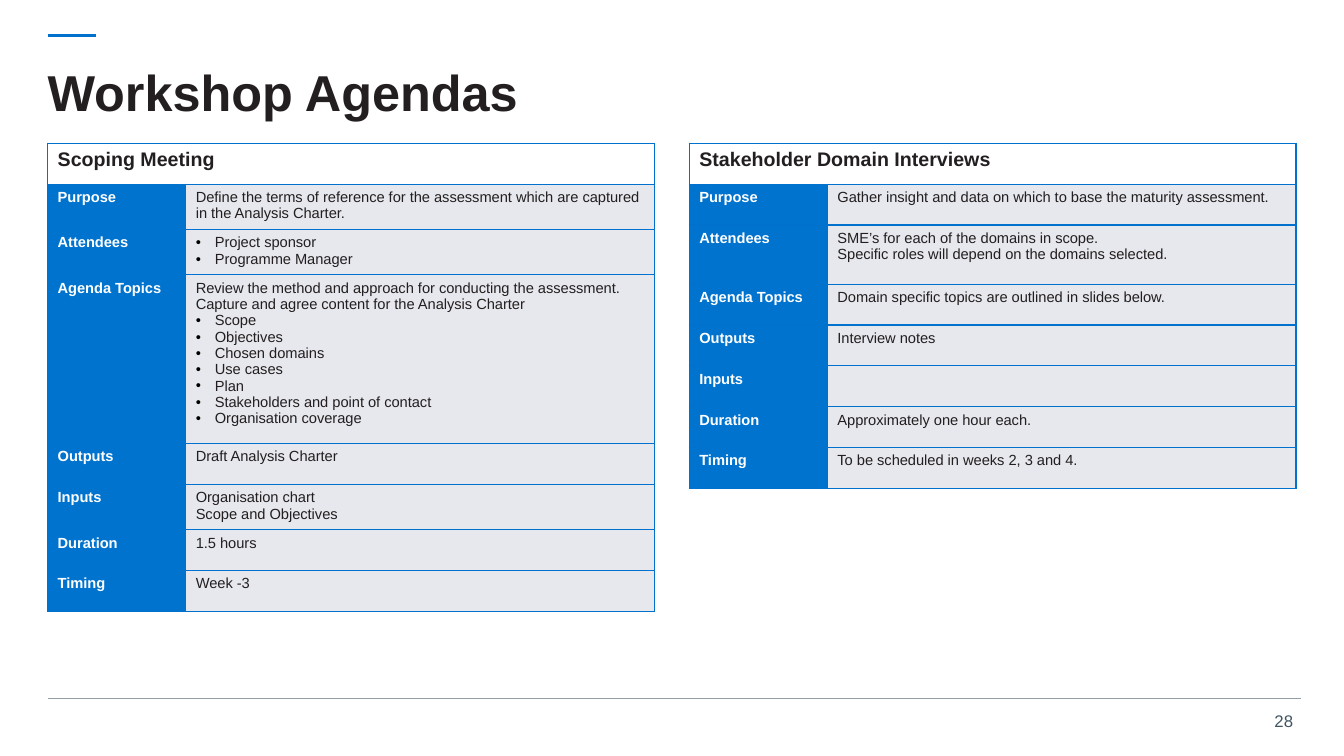
from lxml.etree import SubElement
from pptx import Presentation
from pptx.dml.color import RGBColor
from pptx.enum.shapes import MSO_CONNECTOR
from pptx.enum.text import MSO_ANCHOR, PP_ALIGN
from pptx.oxml.ns import qn
from pptx.util import Cm, Pt

BLUE, CELL_BLUE, INK, GREY, WHITE = "0072CE", "0073CF", "231F20", "E7E8ED", "FFFFFF"
LEFT, TABLE_TOP, TABLE_GAP = 1.2, 3.61, 16.17
COLUMNS = (3.48, 11.81)
ROW, TWO_LINES, THREE_LINES, NINE_LINES = 1.03, 1.08, 1.49, 3.96
HEADING = {"size": Pt(14), "bold": True}
LABEL = {"size": Pt(10.5), "bold": True}
BODY = {"size": Pt(10.5), "bold": False}

SCOPING = [
    ("Purpose", TWO_LINES, ["Define the terms of reference for the assessment which are captured in the Analysis Charter."]),
    ("Attendees", TWO_LINES, ["• Project sponsor", "• Programme Manager"]),
    ("Agenda Topics", NINE_LINES, [
        "Review the method and approach for conducting the assessment.",
        "Capture and agree content for the Analysis Charter",
        "• Scope", "• Objectives", "• Chosen domains", "• Use cases", "• Plan",
        "• Stakeholders and point of contact", "• Organisation coverage"]),
    ("Outputs", ROW, ["Draft Analysis Charter"]),
    ("Inputs", TWO_LINES, ["Organisation chart", "Scope and Objectives"]),
    ("Duration", ROW, ["1.5 hours"]),
    ("Timing", ROW, ["Week -3"]),
]
INTERVIEWS = [
    ("Purpose", ROW, ["Gather insight and data on which to base the maturity assessment."]),
    ("Attendees", THREE_LINES, ["SME’s for each of the domains in scope.",
                                "Specific roles will depend on the domains selected."]),
    ("Agenda Topics", ROW, ["Domain specific topics are outlined in slides below."]),
    ("Outputs", ROW, ["Interview notes"]),
    ("Inputs", ROW, []),
    ("Duration", ROW, ["Approximately one hour each."]),
    ("Timing", ROW, ["To be scheduled in weeks 2, 3 and 4."]),
]


def colour(value):
    """Turn a hex string into a colour."""
    return RGBColor.from_string(value)


def apply(target, values):
    """Set each named attribute on the target."""
    for name, value in values.items():
        setattr(target, name, value)


def add_span(para, text, shade, style):
    """Add a formatted run to a paragraph."""
    span = para.add_run()
    span.text = text
    apply(span.font, {"name": "Arial", **style})
    span.font.color.rgb = colour(shade)


def add_bullet(para):
    """Give a paragraph a black hanging bullet."""
    properties = para._p.get_or_add_pPr()
    properties.set("marL", str(Cm(0.48)))
    properties.set("indent", str(-Cm(0.48)))
    shade = SubElement(properties, qn("a:buClr"))
    SubElement(shade, qn("a:srgbClr"), val="000000")
    SubElement(properties, qn("a:buFont"), typeface="Arial")
    SubElement(properties, qn("a:buChar"), char="•")


def add_text(page, place, text, shade, style, frame_format, para_format):
    """Add a text box holding one line."""
    box = page.shapes.add_textbox(*map(Cm, place))
    apply(box.text_frame, {"word_wrap": True, **frame_format})
    para = box.text_frame.paragraphs[0]
    apply(para, para_format)
    add_span(para, text, shade, style)


def add_rule(page, start, end, height, shade, width):
    """Draw a horizontal line."""
    rule = page.shapes.add_connector(MSO_CONNECTOR.STRAIGHT, Cm(start), Cm(height), Cm(end), Cm(height))
    rule.line.color.rgb = colour(shade)
    rule.line.width = Pt(width)
    SubElement(rule._element.spPr, qn("a:effectLst"))


def fill_cell(cell, lines, fill, shade, style):
    """Border, fill and write one table cell."""
    properties = cell._tc.get_or_add_tcPr()
    for side in ("a:lnL", "a:lnR", "a:lnT", "a:lnB"):
        border = SubElement(properties, qn(side), w=str(Pt(1)))
        SubElement(SubElement(border, qn("a:solidFill")), qn("a:srgbClr"), val=BLUE)
    cell.fill.solid()
    cell.fill.fore_color.rgb = colour(fill)
    for index, line in enumerate(lines):
        frame = cell.text_frame
        para = frame.add_paragraph() if index else frame.paragraphs[0]
        if line.startswith("• "):
            add_bullet(para)
        add_span(para, line.removeprefix("• "), shade, style)


def add_agenda(page, left, heading, rows):
    """Add an agenda table under a merged heading."""
    heights = [ROW] + [height for _, height, _ in rows]
    frame = page.shapes.add_table(len(heights), 2, Cm(left), Cm(TABLE_TOP), Cm(sum(COLUMNS)), Cm(sum(heights)))
    table = frame.table
    for column, width in zip(table.columns, COLUMNS):
        column.width = Cm(width)
    for row, height in zip(table.rows, heights):
        row.height = Cm(height)
    table.cell(0, 0).merge(table.cell(0, 1))
    fill_cell(table.cell(0, 0), [heading], WHITE, INK, HEADING)
    fill_cell(table.cell(0, 1), [], WHITE, INK, HEADING)
    for index, (label, _, lines) in enumerate(rows, 1):
        fill_cell(table.cell(index, 0), [label], CELL_BLUE, WHITE, LABEL)
        fill_cell(table.cell(index, 1), lines, GREY, INK, BODY)


def main():
    """Build the workshop agendas slide."""
    deck = Presentation()
    apply(deck, {"slide_width": Cm(33.87), "slide_height": Cm(19.05)})
    page = deck.slides.add_slide(deck.slide_layouts[6])
    add_text(page, (31.8, 17.78, 1.04, 0.76), "28", "425563", {"size": Pt(12)},
             {"word_wrap": False}, {"alignment": PP_ALIGN.RIGHT})
    add_rule(page, LEFT, 2.41, 0.89, BLUE, 2)
    add_rule(page, LEFT, 32.79, 17.6, "919EA8", 0.75)
    margins = dict.fromkeys(("margin_left", "margin_top", "margin_right", "margin_bottom"), 0)
    add_text(page, (LEFT, 1.2, 31.67, 2.41), "Workshop Agendas", INK, {"size": Pt(36), "bold": True},
             {"vertical_anchor": MSO_ANCHOR.MIDDLE, **margins}, {"line_spacing": 0.9})
    agendas = {"Scoping Meeting": SCOPING, "Stakeholder Domain Interviews": INTERVIEWS}
    for index, (heading, rows) in enumerate(agendas.items()):
        add_agenda(page, LEFT + index * TABLE_GAP, heading, rows)
    deck.save("out.pptx")


if __name__ == "__main__":
    main()
